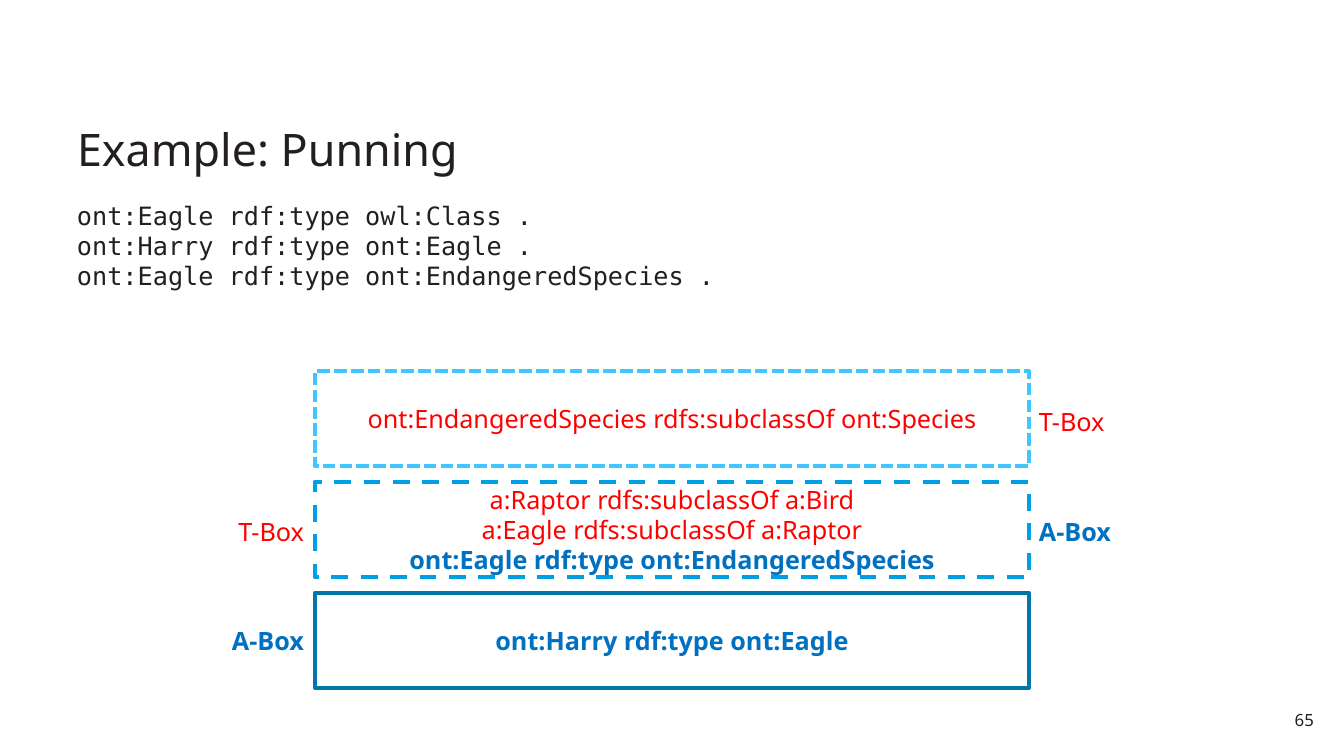
from pptx import Presentation
from pptx.dml.color import RGBColor
from pptx.enum.dml import MSO_LINE
from pptx.enum.shapes import MSO_SHAPE
from pptx.enum.text import MSO_ANCHOR, MSO_AUTO_SIZE, PP_ALIGN
from pptx.util import Emu, Pt

RECTANGLE = MSO_SHAPE.RECTANGLE
TOP, MIDDLE, BOTTOM = MSO_ANCHOR.TOP, MSO_ANCHOR.MIDDLE, MSO_ANCHOR.BOTTOM
LEFT, CENTER, RIGHT = PP_ALIGN.LEFT, PP_ALIGN.CENTER, PP_ALIGN.RIGHT
SOLID, DASH, DOTS = MSO_LINE.SOLID, MSO_LINE.DASH, MSO_LINE.SQUARE_DOT
NO_FIT = MSO_AUTO_SIZE.NONE
SANS, MONO = "Noto Sans", "DejaVu Sans Mono"
COLORS = {
    "ink": "231F20",
    "tbox": "FF0000",
    "abox": "0070C0",
    "species": "42C6FF",
    "classes": "009EE3",
    "individuals": "0076AA",
}


def px(*lengths):
    return [Emu(round(length * 914400 / 100.8)) for length in lengths]


def write(frame, lines, size, align, anchor, insets, font=SANS):
    frame.word_wrap = True
    frame.auto_size = NO_FIT
    frame.vertical_anchor = anchor
    frame.margin_left = frame.margin_right = px(insets[0])[0]
    frame.margin_top = frame.margin_bottom = px(insets[1])[0]
    for index, (text, color) in enumerate(lines):
        paragraph = frame.add_paragraph() if index else frame.paragraphs[0]
        paragraph.text = text
        paragraph.alignment = align
        for run in paragraph.runs:
            run.font.name = font
            run.font.size = Pt(size)
            run.font.bold = color == "abox"
            run.font.color.rgb = RGBColor.from_string(COLORS[color])


prs = Presentation()
prs.slide_width, prs.slide_height = px(1344, 756)
slide = prs.slides.add_slide(prs.slide_layouts[5])
shapes = slide.shapes

title = shapes.title
title.left, title.top, title.width, title.height = px(69, 77, 1207, 103)
write(title.text_frame, [("Example: Punning", "ink")], 32, LEFT, BOTTOM, (8, 4))
title.text_frame.paragraphs[0].line_spacing = 0.9

triples = "\v".join([
    "ont:Eagle rdf:type owl:Class .",
    "ont:Harry rdf:type ont:Eagle .",
    "ont:Eagle rdf:type ont:EndangeredSpecies .",
])
code = shapes.add_textbox(*px(69, 196, 1207, 110))
write(code.text_frame, [(triples, "ink")], 18, LEFT, TOP, (8, 4), MONO)

levels = [
    ("species", DOTS, [("ont:EndangeredSpecies rdfs:subclassOf ont:Species", "tbox")]),
    ("classes", DASH, [
        ("a:Raptor rdfs:subclassOf a:Bird", "tbox"),
        ("a:Eagle rdfs:subclassOf a:Raptor", "tbox"),
        ("ont:Eagle rdf:type ont:EndangeredSpecies", "abox"),
    ]),
    ("individuals", SOLID, [("ont:Harry rdf:type ont:Eagle", "abox")]),
]
for row, (level, dash, statements) in enumerate(levels):
    box = shapes.add_shape(RECTANGLE, *px(315, 371 + 111 * row, 714, 95))
    box.shadow.inherit = False
    box.fill.background()
    box.line.color.rgb = RGBColor.from_string(COLORS[level])
    box.line.width = Pt(3)
    box.line.dash_style = dash
    write(box.text_frame, statements, 18, CENTER, MIDDLE, (10, 5))

roles = [
    ("T-Box", "tbox", 156, 511, RIGHT),
    ("A-Box", "abox", 156, 620, RIGHT),
    ("T-Box", "tbox", 1029, 401, LEFT),
    ("A-Box", "abox", 1029, 511, LEFT),
]
for name, color, left, top, align in roles:
    role = shapes.add_textbox(*px(left, top, 158, 40))
    write(role.text_frame, [(name, color)], 18, align, TOP, (10, 5))

page_number = shapes.add_textbox(*px(1275, 704, 47, 31))
write(page_number.text_frame, [("65", "ink")], 12, RIGHT, TOP, (8, 6))

prs.save("out.pptx")
